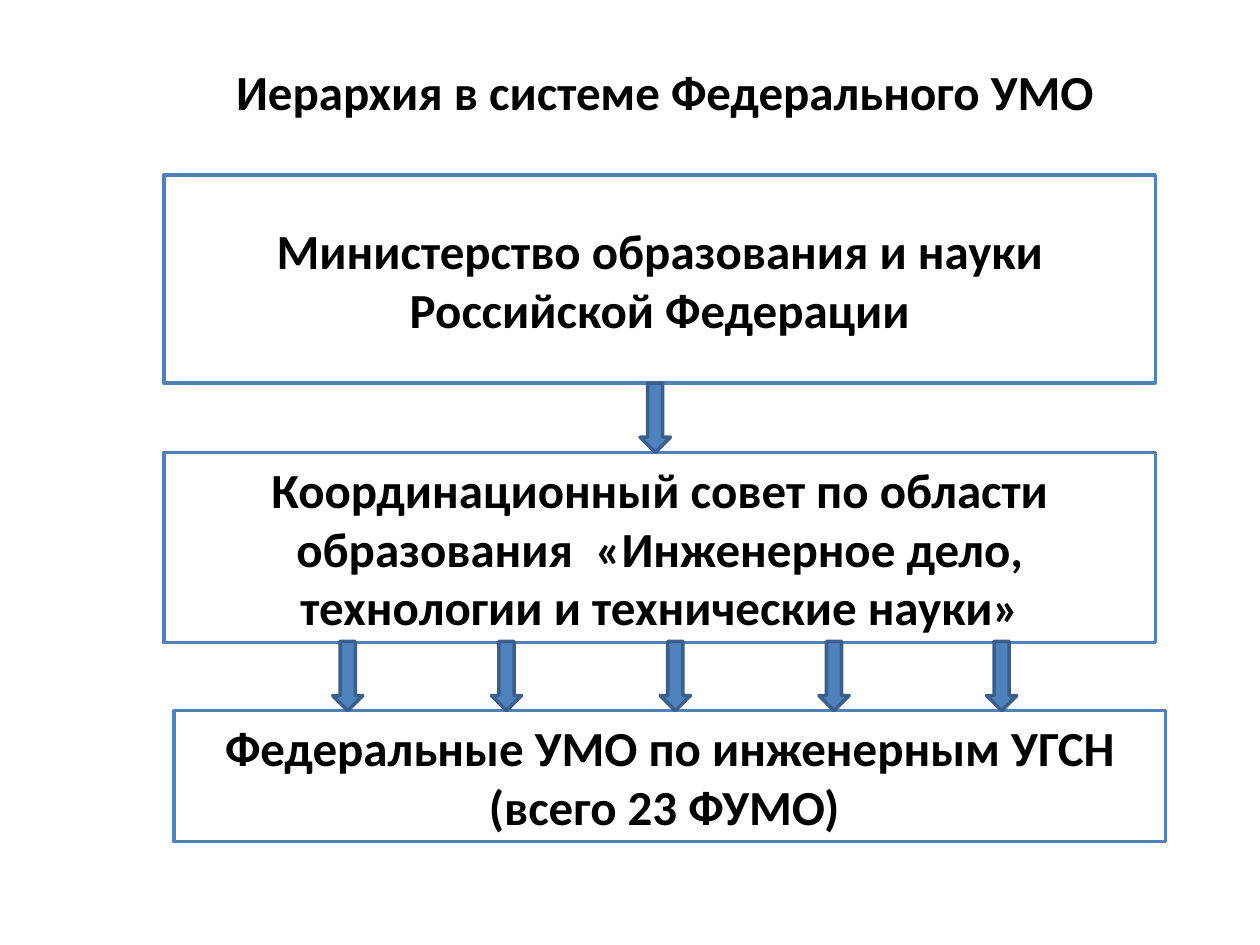
from dataclasses import dataclass

from pptx import Presentation
from pptx.dml.color import RGBColor
from pptx.enum.shapes import MSO_SHAPE
from pptx.enum.text import MSO_ANCHOR, PP_ALIGN
from pptx.util import Inches, Pt

RECTANGLE = MSO_SHAPE.RECTANGLE
DOWN_ARROW = MSO_SHAPE.DOWN_ARROW
MIDDLE = MSO_ANCHOR.MIDDLE
CENTER = PP_ALIGN.CENTER
TITLE_ONLY = 5


@dataclass(frozen=True)
class Theme:
    font: str = "Calibri"
    text_size: Pt = Pt(28)
    line_width: Pt = Pt(2)
    text: RGBColor = RGBColor(0, 0, 0)
    box_fill: RGBColor = RGBColor(0xFF, 0xFF, 0xFF)
    accent: RGBColor = RGBColor(0x4F, 0x81, 0xBD)
    arrow_line: RGBColor = RGBColor(0x3A, 0x5F, 0x8C)


THEME = Theme()

BOX_WIDTH = 7.87
ARROW_WIDTH, ARROW_HEIGHT = 0.24, 0.55

# Levels of the hierarchy: left, top, height, paragraphs
LEVELS = [
    (1.3, 1.39, 1.65, ["Министерство образования и науки Российской Федерации"]),
    (1.3, 3.59, 1.51, ["Координационный совет по области образования  "
                       "«Инженерное дело, технологии и технические науки»"]),
    (1.38, 5.64, 1.04, ["Федеральные УМО по инженерным УГСН",
                        "(всего 23 ФУМО) "]),
]

# Arrows between levels: top, left edges
ARROW_ROWS = [
    (3.04, [5.08]),
    (5.09, [2.64, 3.9, 5.24, 6.5, 7.83]),
]


def write_text(shape, paragraphs):
    frame = shape.text_frame
    frame.text = "\n".join(paragraphs)
    frame.word_wrap = True
    frame.vertical_anchor = MIDDLE
    for paragraph in frame.paragraphs:
        paragraph.alignment = CENTER
        paragraph.font.name = THEME.font
        paragraph.font.size = THEME.text_size
        paragraph.font.bold = True
        paragraph.font.color.rgb = THEME.text


def set_title(slide, text):
    title = slide.shapes.title
    title.left, title.top = Inches(1.3), Inches(0.44)
    title.width, title.height = Inches(7.95), Inches(0.57)
    write_text(title, [text])


def add_filled_shape(slide, kind, left, top, width, height, fill, line):
    shape = slide.shapes.add_shape(
        kind, Inches(left), Inches(top), Inches(width), Inches(height))
    shape.shadow.inherit = False
    shape.fill.solid()
    shape.fill.fore_color.rgb = fill
    shape.line.color.rgb = line
    shape.line.width = THEME.line_width
    return shape


def add_level(slide, left, top, height, paragraphs):
    box = add_filled_shape(slide, RECTANGLE, left, top, BOX_WIDTH, height,
                           THEME.box_fill, THEME.accent)
    write_text(box, paragraphs)


def add_arrow(slide, left, top):
    add_filled_shape(slide, DOWN_ARROW, left, top, ARROW_WIDTH, ARROW_HEIGHT,
                     THEME.accent, THEME.arrow_line)


def main():
    presentation = Presentation()
    presentation.slide_width = Inches(10)
    presentation.slide_height = Inches(7.5)
    slide = presentation.slides.add_slide(presentation.slide_layouts[TITLE_ONLY])

    # Title
    set_title(slide, "Иерархия в системе Федерального УМО")

    # Hierarchy boxes
    for level in LEVELS:
        add_level(slide, *level)

    # Arrows from each level to the next
    for top, lefts in ARROW_ROWS:
        for left in lefts:
            add_arrow(slide, left, top)

    presentation.save("out.pptx")


if __name__ == "__main__":
    main()
